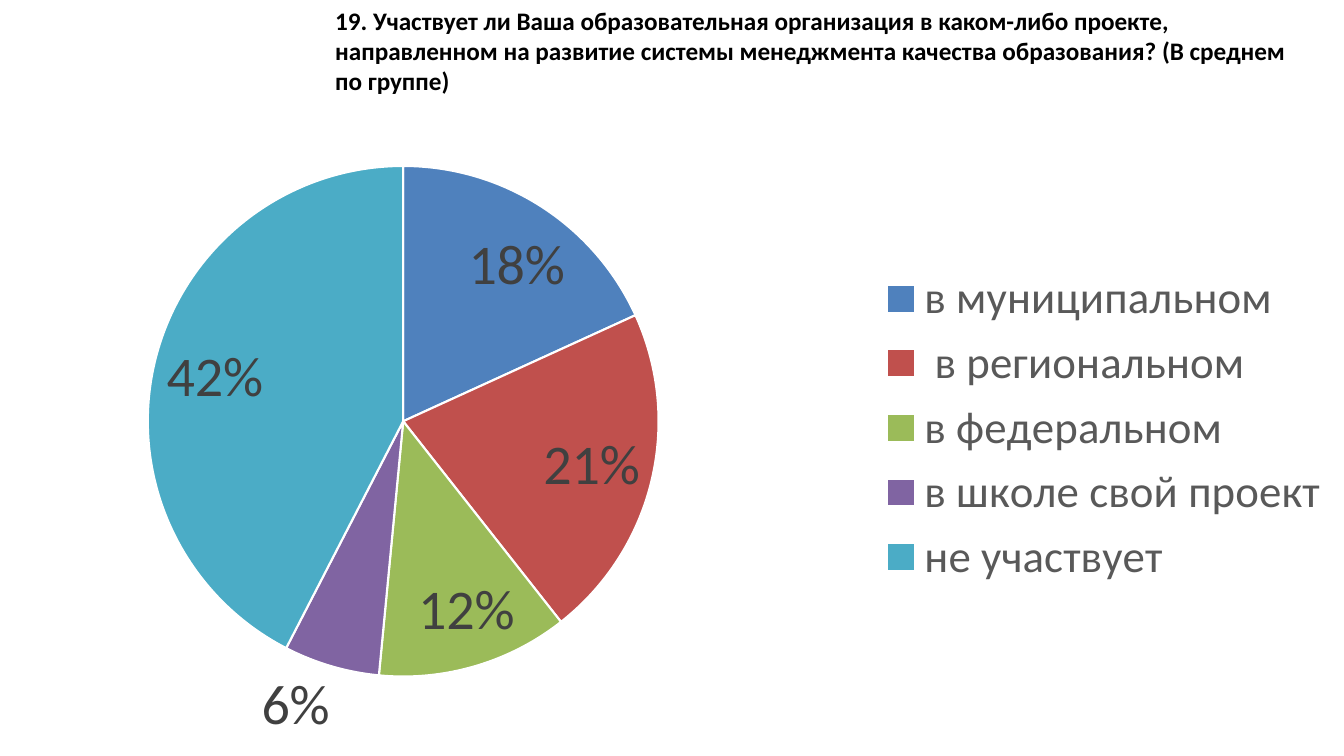
from lxml.etree import SubElement
from pptx import Presentation
from pptx.chart.data import CategoryChartData
from pptx.dml.color import RGBColor
from pptx.enum.chart import XL_CHART_TYPE, XL_LABEL_POSITION, XL_LEGEND_POSITION
from pptx.enum.text import MSO_ANCHOR, PP_ALIGN
from pptx.oxml.ns import qn
from pptx.util import Inches, Pt

BLACK = RGBColor(0x00, 0x00, 0x00)
WHITE = RGBColor(0xFF, 0xFF, 0xFF)
LABEL_GREY = RGBColor(0x40, 0x40, 0x40)
LEGEND_GREY = RGBColor(0x59, 0x59, 0x59)
BLUE = RGBColor(0x4F, 0x81, 0xBD)
RED = RGBColor(0xC0, 0x50, 0x4D)
GREEN = RGBColor(0x9B, 0xBB, 0x59)
PURPLE = RGBColor(0x80, 0x64, 0xA2)
TEAL = RGBColor(0x4B, 0xAC, 0xC6)

QUESTION = (
    "19. Участвует ли Ваша образовательная организация в каком-либо проекте, "
    "направленном на развитие системы менеджмента качества образования? "
    "(В среднем по группе)"
)
# Answer, percentage of the group, slice colour
ANSWERS = [
    ("в муниципальном", 18, BLUE),
    (" в региональном", 21, RED),
    ("в федеральном", 12, GREEN),
    ("в школе свой проект", 6, PURPLE),
    ("не участвует", 42, TEAL),
]


class SurveySlide:
    """Places elements by shares of the slide's width and height."""

    font_name = "Calibri"

    def __init__(self, presentation):
        self.width = presentation.slide_width
        self.height = presentation.slide_height
        self.slide = presentation.slides.add_slide(presentation.slide_layouts[6])

    def place(self, left, top, width, height):
        return (
            round(left * self.width),
            round(top * self.height),
            round(width * self.width),
            round(height * self.height),
        )

    def style(self, font, size, color, bold=False):
        font.name = self.font_name
        font.size = Pt(size)
        font.color.rgb = color
        font.bold = bold

    def add_heading(self, text, area):
        text_frame = self.slide.shapes.add_textbox(*self.place(*area)).text_frame
        text_frame.word_wrap = True
        text_frame.vertical_anchor = MSO_ANCHOR.TOP
        text_frame.text = text
        paragraph = text_frame.paragraphs[0]
        paragraph.alignment = PP_ALIGN.LEFT
        self.style(paragraph.runs[0].font, 18, BLACK, bold=True)

    def add_pie(self, answers, area, plot_area):
        names, values, colors = zip(*answers)
        chart_data = CategoryChartData()
        chart_data.categories = names
        chart_data.add_series("Series 1", values)
        chart = self.slide.shapes.add_chart(
            XL_CHART_TYPE.PIE, *self.place(*area), chart_data
        ).chart
        chart.has_title = False
        self.style(chart.font, 10, BLACK)

        # Slices
        plot = chart.plots[0]
        plot.vary_by_categories = True
        for index, color in enumerate(colors):
            slice_format = plot.series[0].points[index].format
            slice_format.fill.solid()
            slice_format.fill.fore_color.rgb = color
            slice_format.line.color.rgb = WHITE
            slice_format.line.width = Pt(1.5)

        # Percentage labels
        plot.has_data_labels = True
        labels = plot.data_labels
        labels.show_percentage = True
        labels.show_value = False
        labels.number_format = "0%"
        labels.number_format_is_linked = False
        labels.position = XL_LABEL_POSITION.BEST_FIT
        self.style(labels.font, 40, LABEL_GREY)

        # Legend
        chart.has_legend = True
        chart.legend.position = XL_LEGEND_POSITION.RIGHT
        chart.legend.include_in_layout = False
        self.style(chart.legend.font, 32, LEGEND_GREY)

        self.fix_plot_area(chart, plot_area)

    def fix_plot_area(self, chart, plot_area):
        """Pin the pie to shares of the chart's own area."""
        plot_element = chart.element.find(f".//{qn('c:plotArea')}")
        layout = plot_element.find(qn("c:layout"))
        if layout is None:
            layout = SubElement(plot_element, qn("c:layout"))
            plot_element.insert(0, layout)
        manual = SubElement(layout, qn("c:manualLayout"))
        settings = [("layoutTarget", "inner"), ("xMode", "edge"), ("yMode", "edge")]
        settings += zip("xywh", map(str, plot_area))
        for tag, value in settings:
            SubElement(manual, qn(f"c:{tag}")).set("val", value)


def main():
    presentation = Presentation()
    presentation.slide_width = Inches(13.33)
    presentation.slide_height = Inches(7.5)
    survey = SurveySlide(presentation)

    # Question
    survey.add_heading(QUESTION, (0.242, 0, 0.727, 0.175))
    # Distribution of answers
    survey.add_pie(ANSWERS, (0, 0.132, 1, 0.868), (0.11, 0.1, 0.38, 0.78))

    presentation.save("out.pptx")


if __name__ == "__main__":
    main()
